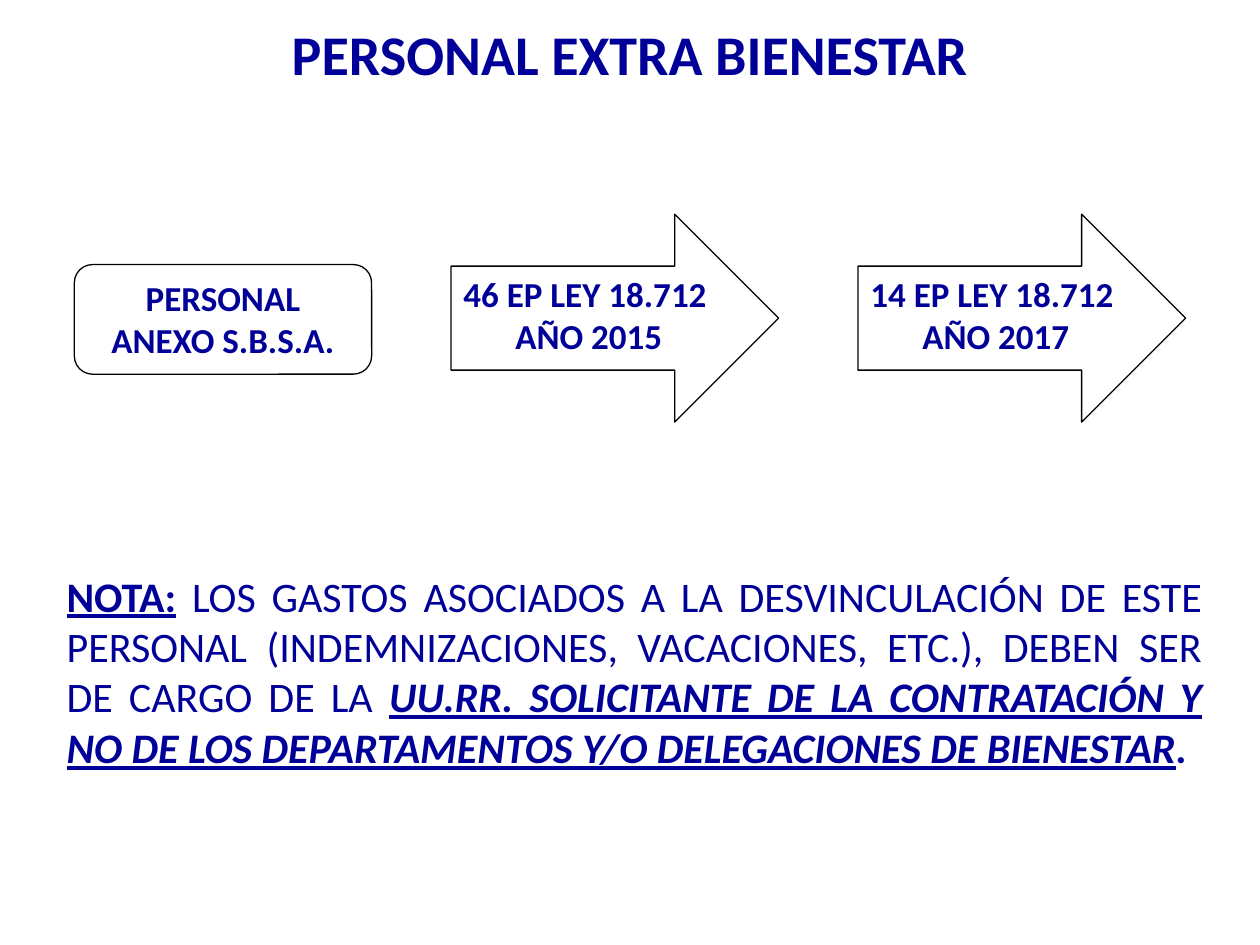
import pptx
import pptx.util
import pptx.dml.color
import pptx.enum.shapes
import pptx.enum.text
import pptx.oxml
import pptx.oxml.ns
import lxml.etree

Inches, Pt = pptx.util.Inches, pptx.util.Pt
SHAPE = pptx.enum.shapes.MSO_SHAPE
ALIGN = pptx.enum.text.PP_ALIGN
ANCHOR = pptx.enum.text.MSO_ANCHOR
COLORS = {"text": "000099", "fill": "FFFFFF", "line": "000000"}


class Deck:
    """Holds the style and the current slide."""

    font = {"name": "Calibri", "bold": True}

    def __init__(self, width, height):
        self.prs = pptx.Presentation()
        self.prs.slide_width, self.prs.slide_height = Inches(width), Inches(height)
        self.slide = self.prs.slides.add_slide(self.prs.slide_layouts[6])

    def color(self, key):
        return pptx.dml.color.RGBColor.from_string(COLORS[key])

    def fill_text(self, tf, paragraphs, size, anchor):
        """Each paragraph is (alignment, [(text, format), ...])."""
        tf.word_wrap = True
        tf.vertical_anchor = anchor
        for i, (align, runs) in enumerate(paragraphs):
            p = tf.paragraphs[0] if i == 0 else tf.add_paragraph()
            p.alignment = align
            for text, extra in runs:
                r = p.add_run()
                r.text = text
                for name, value in {**self.font, "size": Pt(size), **extra}.items():
                    setattr(r.font, name, value)
                r.font.color.rgb = self.color("text")

    def text(self, box, paragraphs, size):
        sp = self.slide.shapes.add_textbox(*map(Inches, box))
        self.fill_text(sp.text_frame, paragraphs, size, ANCHOR.MIDDLE)

    def shape(self, kind, box, paragraphs, size=20):
        sp = self.slide.shapes.add_shape(kind, *map(Inches, box))
        sp.shadow.inherit = False
        sp.fill.solid()
        sp.fill.fore_color.rgb = self.color("fill")
        # Half-transparent fill
        clr = sp.element.spPr.find(".//" + pptx.oxml.ns.qn("a:srgbClr"))
        lxml.etree.SubElement(clr, pptx.oxml.ns.qn("a:alpha"), val="50000")
        sp.line.color.rgb = self.color("line")
        sp.line.width = Pt(0.75)
        self.fill_text(sp.text_frame, paragraphs, size, ANCHOR.TOP)


def main():
    deck = Deck(10, 7.5)

    # Title
    deck.text((0.75, 0.05, 8.5, 0.75),
              [(ALIGN.CENTER, [("PERSONAL EXTRA BIENESTAR", {})])], 32)

    # Staff group, followed by one arrow per year
    deck.shape(SHAPE.ROUNDED_RECTANGLE, (0.59, 2.1, 2.36, 0.87),
               [(ALIGN.CENTER, [("PERSONAL ANEXO S.B.S.A.", {})])])
    arrows = [("46 EP LEY 18.712", "AÑO 2015"), ("14 EP LEY 18.712", "AÑO 2017")]
    for i, (count, year) in enumerate(arrows):
        deck.shape(SHAPE.RIGHT_ARROW, (3.58 + 3.23 * i, 1.7, 2.6, 1.65),
                   [(ALIGN.LEFT, [(count, {})]), (ALIGN.CENTER, [(year, {})])])

    # Note
    note = [
        ("NOTA:", {"underline": True}),
        (" LOS GASTOS ASOCIADOS A LA DESVINCULACIÓN DE ESTE PERSONAL "
         "(INDEMNIZACIONES, VACACIONES, ETC.), DEBEN SER DE CARGO DE LA ",
         {"bold": False}),
        ("UU.RR. SOLICITANTE DE LA CONTRATACIÓN Y NO DE LOS DEPARTAMENTOS "
         "Y/O DELEGACIONES DE BIENESTAR", {"italic": True, "underline": True}),
        (".", {"italic": True}),
    ]
    deck.text((0.43, 4.38, 9.21, 1.89), [(ALIGN.JUSTIFY, note)], 24)

    deck.prs.save("out.pptx")


if __name__ == "__main__":
    main()
